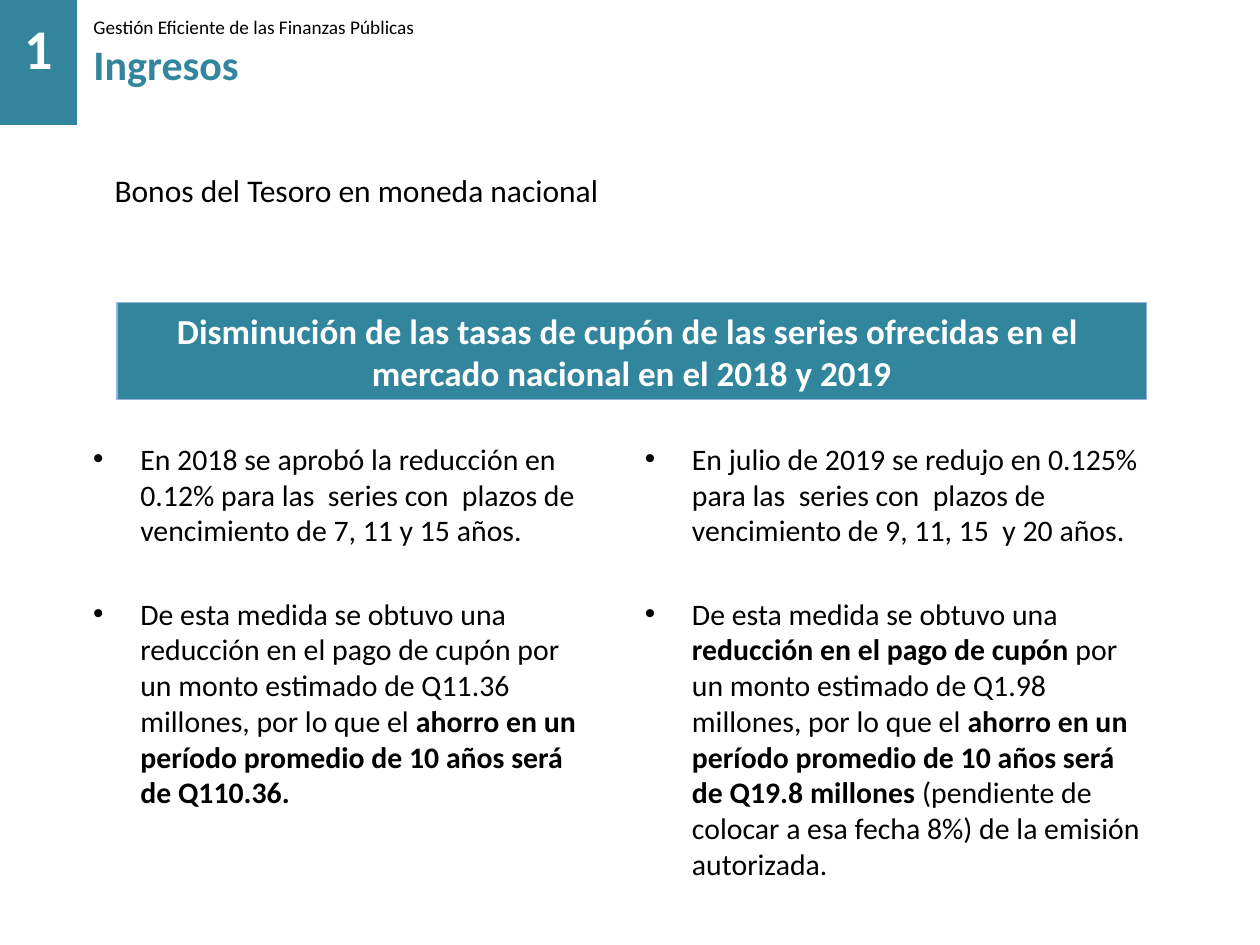
import dataclasses

import lxml.etree
import pptx
import pptx.dml.color
import pptx.enum.shapes
import pptx.enum.text
import pptx.oxml.ns
import pptx.util

Cm = pptx.util.Cm
ALIGN = pptx.enum.text.PP_ALIGN
ANCHOR = pptx.enum.text.MSO_ANCHOR


@dataclasses.dataclass(frozen=True)
class Theme:
    font: str = "Calibri"
    black: str = "000000"
    white: str = "FFFFFF"
    teal: str = "31859C"
    heading_teal: str = "32859C"
    border: str = "95B3D7"
    overline_size: float = 11
    body_size: float = 17
    subtitle_size: float = 18
    banner_size: float = 20
    heading_size: float = 24
    number_size: float = 32


class SlideBuilder:
    def __init__(self, slide, theme):
        self.slide = slide
        self.theme = theme

    def format_font(self, font, size, color, bold=False):
        values = {"name": self.theme.font, "size": pptx.util.Pt(size), "bold": bold}
        for name, value in values.items():
            setattr(font, name, value)
        font.color.rgb = pptx.dml.color.RGBColor.from_string(color)

    def prepare_frame(self, shape, anchor=ANCHOR.TOP):
        frame = shape.text_frame
        values = {
            "word_wrap": True,
            "auto_size": pptx.enum.text.MSO_AUTO_SIZE.NONE,
            "vertical_anchor": anchor,
        }
        for name, value in values.items():
            setattr(frame, name, value)
        return frame

    def add_run(self, paragraph, text, size, color, bold=False):
        run = paragraph.add_run()
        run.text = text
        self.format_font(run.font, size, color, bold)

    def title(self, box, lines):
        """Fill the title placeholder; each line is (text, size, color, bold)."""
        shape = self.slide.shapes.title
        for name, value in zip(("left", "top", "width", "height"), box):
            setattr(shape, name, Cm(value))
        frame = self.prepare_frame(shape)
        for index, line in enumerate(lines):
            paragraph = frame.add_paragraph() if index else frame.paragraphs[0]
            paragraph.alignment = ALIGN.LEFT
            self.add_run(paragraph, *line)

    def text(self, box, text, size, color, bold=False):
        shape = self.slide.shapes.add_textbox(*map(Cm, box))
        paragraph = self.prepare_frame(shape).paragraphs[0]
        self.add_run(paragraph, text, size, color, bold)

    def rectangle(self, box, fill, border=None):
        kind = pptx.enum.shapes.MSO_SHAPE.RECTANGLE
        shape = self.slide.shapes.add_shape(kind, *map(Cm, box))
        shape.shadow.inherit = False
        shape.fill.solid()
        shape.fill.fore_color.rgb = pptx.dml.color.RGBColor.from_string(fill)
        if border:
            shape.line.color.rgb = pptx.dml.color.RGBColor.from_string(border)
            shape.line.width = pptx.util.Pt(0.75)
        else:
            shape.line.fill.background()
        return shape

    def banner(self, box, lines):
        theme = self.theme
        shape = self.rectangle(box, theme.teal, theme.border)
        paragraph = self.prepare_frame(shape, ANCHOR.MIDDLE).paragraphs[0]
        paragraph.alignment = ALIGN.CENTER
        for index, line in enumerate(lines):
            if index:
                paragraph.add_line_break()
            self.add_run(paragraph, line, theme.banner_size, theme.white, True)

    def bullets(self, box, items):
        """Add bulleted paragraphs; each item is a list of (text, bold)."""
        theme = self.theme
        frame = self.prepare_frame(self.slide.shapes.add_textbox(*map(Cm, box)))
        for index, item in enumerate(items):
            paragraph = frame.add_paragraph() if index else frame.paragraphs[0]
            properties = paragraph._p.get_or_add_pPr()
            properties.set("marL", str(Cm(0.95)))
            properties.set("indent", str(-Cm(0.95)))
            for tag, name, value in (("a:buFont", "typeface", "Arial"), ("a:buChar", "char", "•")):
                element = lxml.etree.SubElement(properties, pptx.oxml.ns.qn(tag))
                element.set(name, value)
            if index:
                paragraph.space_before = pptx.util.Pt(27.2)
            for text, bold in item:
                self.add_run(paragraph, text, theme.body_size, theme.black, bold)


def main():
    presentation = pptx.Presentation()
    presentation.slide_width = Cm(25.4)
    presentation.slide_height = Cm(19.05)
    slide = presentation.slides.add_slide(presentation.slide_layouts[5])
    theme = Theme()
    builder = SlideBuilder(slide, theme)

    builder.title((1.63, 0.18, 21.89, 1.75), [
        ("Gestión Eficiente de las Finanzas Públicas", theme.overline_size, theme.black, False),
        ("Ingresos", theme.heading_size, theme.heading_teal, True),
    ])
    builder.rectangle((-0.05, -0.08, 1.6, 2.6), theme.heading_teal)
    builder.text((0.25, 0.15, 1.42, 1.63), "1", theme.number_size, theme.white, True)
    builder.text((2.06, 3.33, 14.25, 1.02), "Bonos del Tesoro en moneda nacional",
                 theme.subtitle_size, theme.black)
    builder.banner((2.36, 6.1, 20.75, 1.96), [
        "Disminución de las tasas de cupón de las series ofrecidas en el ",
        "mercado nacional en el 2018 y 2019",
    ])

    year_2018 = [
        [("En 2018 se aprobó la reducción en 0.12% para las  series con  plazos de "
          "vencimiento de 7, 11 y 15 años.", False)],
        [("De esta medida se obtuvo una reducción en el pago de cupón por un monto "
          "estimado de Q11.36 millones, por lo que el ", False),
         ("ahorro en un período promedio de 10 años será de Q110.36.", True)],
    ]
    year_2019 = [
        [("En julio de 2019 se redujo en 0.125% para las  series con  plazos de "
          "vencimiento de 9, 11, 15  y 20 años.", False)],
        [("De esta medida se obtuvo una ", False),
         ("reducción en el pago de cupón ", True),
         ("por un monto estimado de Q1.98 millones, por lo que el ", False),
         ("ahorro en un período promedio de 10 años será de Q19.8 millones", True),
         (" (pendiente de colocar a esa fecha 8%) de la emisión autorizada.", False)],
    ]
    for left, height, items in ((1.63, 7.82, year_2018), (12.75, 10.29, year_2019)):
        builder.bullets((left, 8.76, 10.59, height), items)

    presentation.save("out.pptx")


if __name__ == "__main__":
    main()
